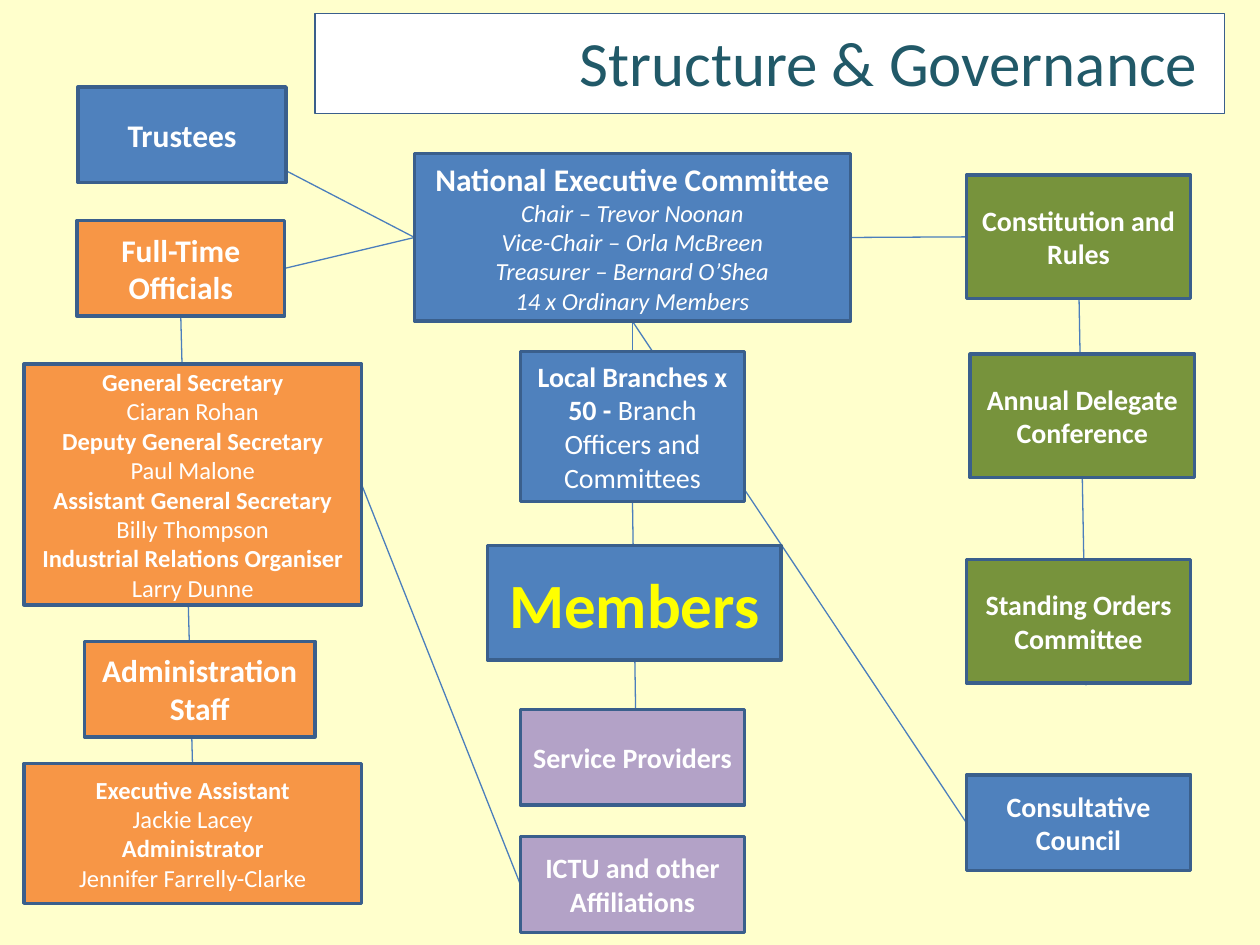
from lxml import etree
from pptx import Presentation
from pptx.dml.color import RGBColor
from pptx.enum import shapes, text
from pptx.oxml.ns import qn
from pptx.util import Inches, Pt

CREAM = RGBColor(0xFF, 0xFF, 0xCC)
WHITE = RGBColor(0xFF, 0xFF, 0xFF)
YELLOW = RGBColor(0xFF, 0xFF, 0x00)
TEAL = RGBColor(0x21, 0x59, 0x68)
BLUE = RGBColor(0x4F, 0x81, 0xBD)
ORANGE = RGBColor(0xF7, 0x96, 0x46)
GREEN = RGBColor(0x77, 0x93, 0x3C)
PURPLE = RGBColor(0xB3, 0xA2, 0xC7)
BORDER = RGBColor(0x3A, 0x5F, 0x8C)
LINK = RGBColor(0x4B, 0x7E, 0xBC)
FONT = "Calibri"
TOP, LEFT, BOTTOM, RIGHT = range(4)


def heading(words, size):
    return [(words, size, "bold")]


def roles(*pairs):
    """One bold paragraph for each role, then one plain paragraph for its holder."""
    return [[(words, 14, style)] for pair in pairs
            for words, style in zip(pair, ("bold", "plain"))]


# name: (left, top, width, height), fill, paragraphs of (words, size, style)
BOXES = {
    "committee": ((3.29, 1.22, 3.46, 1.33), BLUE, [
        heading("National Executive Committee", 18),
        [("Chair – Trevor Noonan\nVice-Chair – Orla McBreen", 14, "italic")],
        [("Treasurer – Bernard O’Shea", 14, "italic")],
        [("14 x Ordinary Members", 14, "italic")]]),
    "members": ((3.87, 4.33, 2.33, 0.91), BLUE, [heading("Members", 36)]),
    "officials": ((0.61, 1.75, 1.65, 0.76), ORANGE, [heading("Full-Time Officials", 18)]),
    "secretaries": ((0.19, 2.89, 2.68, 1.91), ORANGE, roles(
        ("General Secretary", "Ciaran Rohan"),
        ("Deputy General Secretary", "Paul Malone"),
        ("Assistant General Secretary", "Billy Thompson"),
        ("Industrial Relations Organiser", "Larry Dunne"))),
    "administration": ((0.67, 5.09, 1.83, 0.76), ORANGE,
                       [heading("Administration Staff", 18)]),
    "assistants": ((0.19, 6.06, 2.68, 1.11), ORANGE, roles(
        ("Executive Assistant", "Jackie Lacey"),
        ("Administrator", "Jennifer Farrelly-Clarke"))),
    "conference": ((7.7, 2.81, 1.78, 0.98), GREEN,
                   [heading("Annual Delegate Conference", 16)]),
    "orders": ((7.67, 4.44, 1.78, 0.98), GREEN, [heading("Standing Orders Committee", 16)]),
    "council": ((7.67, 6.15, 1.78, 0.76), BLUE, [heading("Consultative Council", 16)]),
    "branches": ((4.13, 2.79, 1.78, 1.19), BLUE, [
        [("Local Branches x 50 - ", 16, "bold"),
         ("Branch Officers and Committees", 16, "plain")]]),
    "providers": ((4.13, 5.63, 1.78, 0.76), PURPLE, [heading("Service Providers", 16)]),
    "affiliations": ((4.13, 6.64, 1.78, 0.76), PURPLE,
                     [heading("ICTU and other Affiliations", 16)]),
    "constitution": ((7.67, 1.39, 1.78, 0.98), GREEN, [heading("Constitution and Rules", 16)]),
    "trustees": ((0.62, 0.69, 1.65, 0.76), BLUE, [heading("Trustees", 18)]),
}
TEXT_COLOURS = {"members": YELLOW}

# Each end is a (box, side) joint or a free (x, y) point behind a box
LINKS = [
    (("committee", BOTTOM), ("council", LEFT)),
    (("branches", BOTTOM), (5.05, 6.01)),
    ((8.56, 2.15), (8.62, 5.44)),
    (("officials", BOTTOM), (1.53, 6.15)),
    (("committee", LEFT), ("officials", RIGHT)),
    (("committee", BOTTOM), ("branches", TOP)),
    (("constitution", LEFT), ("committee", RIGHT)),
    (("committee", LEFT), (2.01, 1.22)),
    (("affiliations", LEFT), ("secretaries", RIGHT)),
]


def send_to_back(page, shape):
    page.shapes._spTree.insert(2, shape._element)


def add_rectangle(page, place, fill, line_width):
    box = page.shapes.add_shape(shapes.MSO_SHAPE.RECTANGLE, *map(Inches, place))
    box.shadow.inherit = False
    box.fill.solid()
    box.fill.fore_color.rgb = fill
    box.line.color.rgb = BORDER
    box.line.width = Pt(line_width)
    return box


def write_paragraphs(box, paragraphs, colour):
    frame = box.text_frame
    frame.word_wrap = True
    frame.vertical_anchor = text.MSO_ANCHOR.MIDDLE
    for number, spans in enumerate(paragraphs):
        para = frame.add_paragraph() if number else frame.paragraphs[0]
        para.alignment = text.PP_ALIGN.CENTER
        for words, size, style in spans:
            for row, line in enumerate(words.split("\n")):
                if row:
                    para.add_line_break()
                span = para.add_run()
                span.text = line
                span.font.name = FONT
                span.font.size = Pt(size)
                span.font.bold = style == "bold"
                span.font.italic = style == "italic"
                span.font.color.rgb = colour


def add_link(page, boxes, ends):
    link = page.shapes.add_connector(shapes.MSO_CONNECTOR.STRAIGHT, 0, 0, 0, 0)
    # Free ends are placed first, as joints then settle on their boxes
    (link.begin_x, link.begin_y), (link.end_x, link.end_y) = [
        (0, 0) if end[0] in boxes else map(Inches, end) for end in ends]
    for end, connect in zip(ends, (link.begin_connect, link.end_connect)):
        if end[0] in boxes:
            connect(boxes[end[0]], end[1])
    link.line.color.rgb = LINK
    link.line.width = Pt(0.75)
    etree.SubElement(link._element.spPr, qn("a:effectLst"))
    send_to_back(page, link)


def add_title(page):
    send_to_back(page, add_rectangle(page, (2.5, 0.11, 7.22, 0.79), WHITE, 0.75))
    title = page.shapes.title
    title.left, title.top, title.width, title.height = map(Inches, (4.5, 0.14, 5.15, 0.71))
    title.text = "Structure & Governance"
    title.text_frame.word_wrap = False
    title.text_frame.vertical_anchor = text.MSO_ANCHOR.TOP
    para = title.text_frame.paragraphs[0]
    para.alignment = text.PP_ALIGN.LEFT
    para.font.name = FONT
    para.font.size = Pt(36)
    para.font.color.rgb = TEAL


def main():
    deck = Presentation()
    deck.slide_width, deck.slide_height = Inches(10), Inches(7.5)
    page = deck.slides.add_slide(deck.slide_layouts[5])
    page.background.fill.solid()
    page.background.fill.fore_color.rgb = CREAM
    add_title(page)
    boxes = {}
    for name, (place, fill, paragraphs) in BOXES.items():
        boxes[name] = add_rectangle(page, place, fill, 2)
        write_paragraphs(boxes[name], paragraphs, TEXT_COLOURS.get(name, WHITE))
    for ends in LINKS:
        add_link(page, boxes, ends)
    deck.save("out.pptx")


if __name__ == "__main__":
    main()
